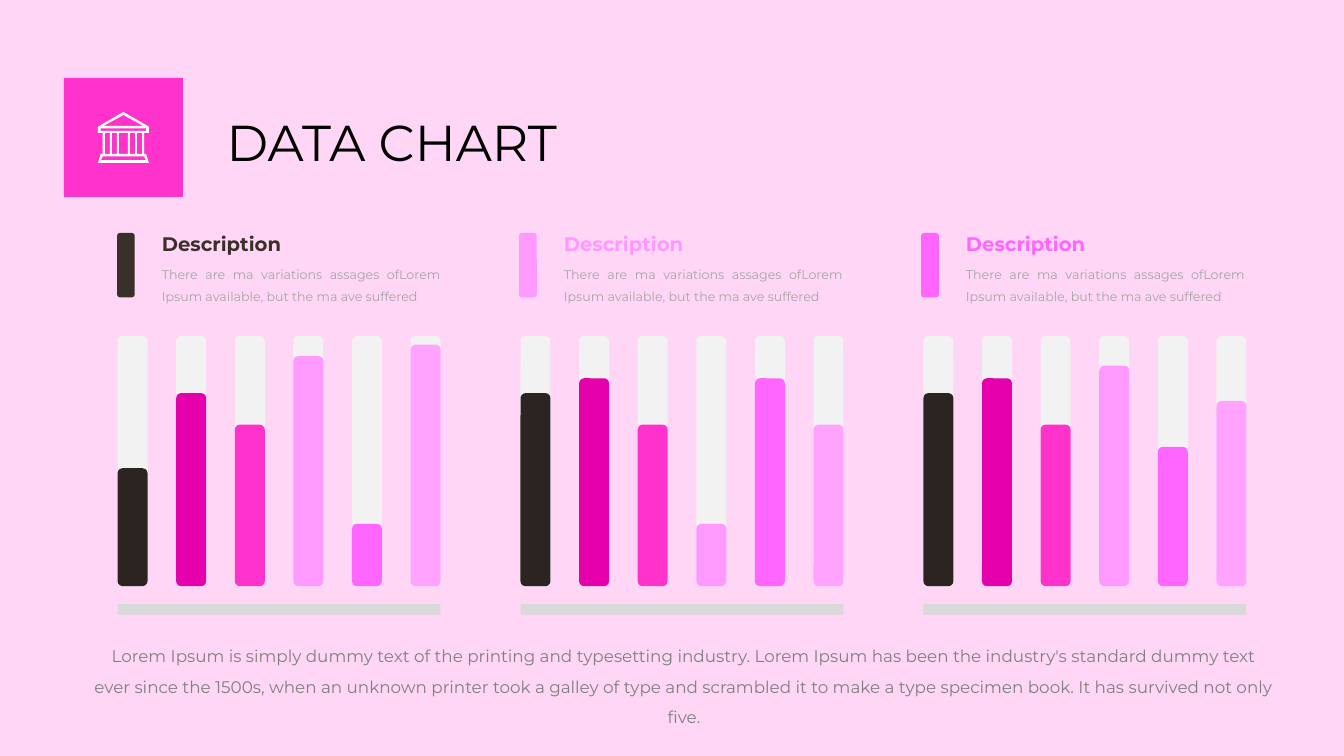
from pptx import Presentation
from pptx.dml.color import RGBColor
from pptx.enum.shapes import MSO_SHAPE as Preset
from pptx.enum.text import MSO_ANCHOR as Anchor, PP_ALIGN as Align
from pptx.util import Pt

BACKGROUND = RGBColor(0xFF, 0xD6, 0xF5)
WHITE = RGBColor(0xFF, 0xFF, 0xFF)
BLACK = RGBColor(0x00, 0x00, 0x00)
BROWN = RGBColor(0x39, 0x30, 0x2A)
DARK = RGBColor(0x2B, 0x24, 0x20)
MAGENTA = RGBColor(0xE5, 0x00, 0xAC)
HOT_PINK = RGBColor(0xFF, 0x33, 0xCC)
PINK = RGBColor(0xFF, 0x66, 0xFF)
LIGHT_PINK = RGBColor(0xFF, 0x99, 0xFF)
PALE_PINK = RGBColor(0xFF, 0xA3, 0xFF)
TRACK = RGBColor(0xF2, 0xF2, 0xF2)
BASELINE = RGBColor(0xD9, 0xD9, 0xD9)
LIGHT_GREY = RGBColor(0xA6, 0xA6, 0xA6)
GREY = RGBColor(0x80, 0x80, 0x80)

BAR_COLORS = (DARK, MAGENTA, HOT_PINK, LIGHT_PINK, PINK, PALE_PINK)
PANELS = (
    (BROWN, (84.2, 137.9, 115.4, 164.3, 44.5, 172.6)),
    (LIGHT_PINK, (137.9, 148.5, 115.4, 44.5, 148.5, 115.4)),
    (PINK, (137.9, 148.5, 115.4, 157.5, 99.5, 132.3)),
)
BAR_WIDTH, BAR_STEP = 21.4, 41.86
TRACK_HEIGHT, BAR_BOTTOM = 178.7, 418.7

DETAIL = ("There are ma variations assages ofLorem Ipsum available, "
          "but the ma ave suffered")
SUMMARY = ("Lorem Ipsum\u00a0is simply dummy text of the printing and typesetting "
           "industry. Lorem Ipsum has been the industry's standard dummy text ever "
           "since the 1500s, when an unknown printer took a galley of type and "
           "scrambled it to make a type specimen book. It has survived not only five.")


def rectangle(left, top, right, bottom):
    """Return the corners of a rectangle."""
    return [(left, top), (right, top), (right, bottom), (left, bottom)]


TEMPLE = [
    [(70, 90.5), (88.2, 80), (106.4, 90.5), (106.4, 95), (103, 95), (103, 110),
     (104.4, 110), (106.4, 116.4), (70, 116.4), (72, 110), (73.4, 110),
     (73.4, 95), (70, 95)],
    [(88.2, 82.2), (102.5, 90), (73.9, 90)],
    [(72.1, 114.4), (73.4, 111.8), (103, 111.8), (104.3, 114.4)],
    rectangle(72, 91.7, 104.4, 93.5),
] + [rectangle(left, 95, right, 110) for left, right in (
    (74.9, 78.5), (79.9, 83.5), (85, 91.4), (92.9, 96.5), (97.9, 101.5))]


class Painter:
    """Draws elements in one style on the current slide."""

    def __init__(self, page, font):
        self.page = page
        self.font = font
        page.background.fill.solid()
        page.background.fill.fore_color.rgb = BACKGROUND

    def paint(self, shape, color):
        """Give a shape a flat fill without outline or shadow."""
        shape.shadow.inherit = False
        shape.fill.solid()
        shape.fill.fore_color.rgb = color
        shape.line.fill.background()

    def block(self, left, top, width, height, color, preset=Preset.RECTANGLE):
        """Add a filled preset shape."""
        shape = self.page.shapes.add_shape(
            preset, Pt(left), Pt(top), Pt(width), Pt(height))
        self.paint(shape, color)

    def bar(self, left, bottom, width, height, color):
        """Add a rounded bar standing on its bottom edge."""
        self.block(left, bottom - height, width, height, color,
                   Preset.ROUNDED_RECTANGLE)

    def outline(self, contours, color):
        """Add a filled outline whose inner contours are holes."""
        first, *holes = [[(Pt(x), Pt(y)) for x, y in contour] for contour in contours]
        builder = self.page.shapes.build_freeform(*first[0])
        builder.add_line_segments(first[1:])
        for hole in holes:
            builder.move_to(*hole[0])
            builder.add_line_segments(hole[1:])
        self.paint(builder.convert_to_shape(), color)

    def text(self, left, top, width, height, words, size, color, bold=False,
             align=Align.LEFT, anchor=Anchor.TOP, spacing=1.0, inset=True):
        """Add a text box with one paragraph."""
        box = self.page.shapes.add_textbox(Pt(left), Pt(top), Pt(width), Pt(height))
        frame = box.text_frame
        frame.word_wrap = True
        frame.vertical_anchor = anchor
        if not inset:
            frame.margin_left = frame.margin_right = Pt(0)
            frame.margin_top = frame.margin_bottom = Pt(0)
        para = frame.paragraphs[0]
        para.text = words
        para.alignment = align
        para.line_spacing = spacing
        para.font.name = self.font
        para.font.size = Pt(size)
        para.font.bold = bold
        para.font.color.rgb = color

    def legend(self, left, color):
        """Add a marker with its heading and detail text."""
        self.bar(left, 212.4, 12.6, 46, color)
        self.text(left + 32, 185, 198.7, 31, DETAIL, 9, LIGHT_GREY,
                  align=Align.JUSTIFY, spacing=1.5, inset=False)
        self.text(left + 32, 165.6, 103, 22.3, "Description", 14, color,
                  bold=True, inset=False)

    def bars(self, left, heights):
        """Add a row of bars on tracks above a baseline."""
        for index, (height, color) in enumerate(zip(heights, BAR_COLORS)):
            bar_left = left + index * BAR_STEP
            self.bar(bar_left, BAR_BOTTOM, BAR_WIDTH, TRACK_HEIGHT, TRACK)
            self.bar(bar_left, BAR_BOTTOM, BAR_WIDTH, height, color)
        self.block(left, 431.4, 230.6, 7.7, BASELINE)


def main():
    """Build the slide and save it."""
    deck = Presentation()
    deck.slide_width, deck.slide_height = Pt(960), Pt(540)
    painter = Painter(deck.slides.add_slide(deck.slide_layouts[6]), "Montserrat")
    painter.block(45.6, 55.6, 85, 85, HOT_PINK)
    painter.outline(TEMPLE, WHITE)
    painter.text(154.8, 74.9, 666.7, 51.1, "DATA CHART", 36, BLACK,
                 anchor=Anchor.BOTTOM)
    for index, (color, heights) in enumerate(PANELS):
        painter.legend(83.6 + index * 287.2, color)
        painter.bars(84 + index * 287.8, heights)
    painter.text(59.8, 450.7, 857.5, 48.2, SUMMARY, 12, GREY,
                 align=Align.CENTER, spacing=1.5)
    deck.save("out.pptx")


if __name__ == "__main__":
    main()
